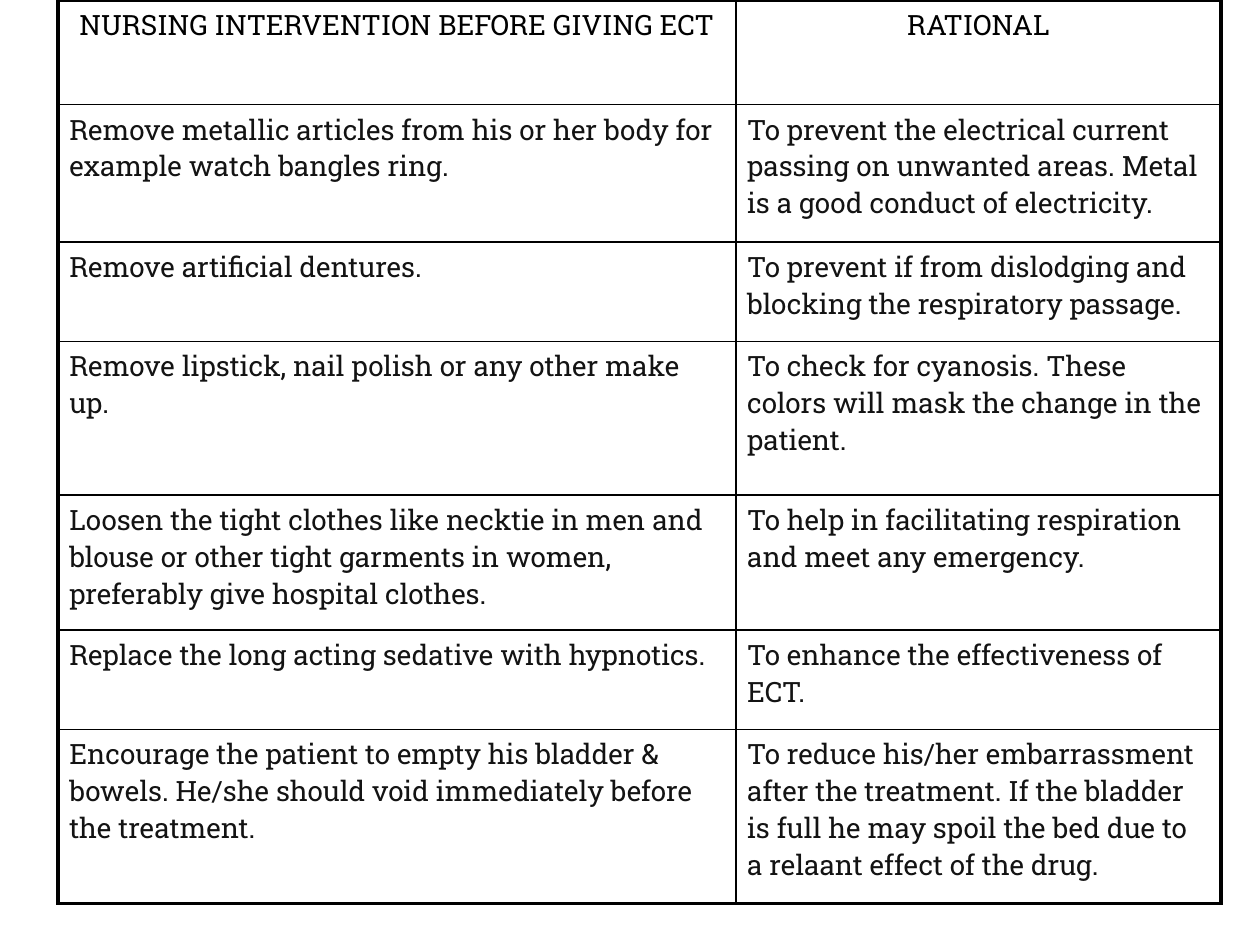
import pptx
import pptx.util
import pptx.dml.color
import pptx.enum.text
import pptx.oxml
import pptx.oxml.ns
from pptx.util import Inches

FONT = "Roboto Slab"
THICK, THIN = 2.25, 1
COLS = [5.38, 3.85]
HEIGHTS = [0.83, 1.09, 0.79, 1.22, 1.07, 0.79, 1.38]
ROWS = [
    ("NURSING INTERVENTION BEFORE GIVING ECT", "RATIONAL"),
    ("Remove metallic articles from his or her body for example watch bangles ring.",
     "To prevent the electrical current passing on unwanted areas. Metal is a good conduct of electricity."),
    ("Remove artificial dentures.",
     "To prevent if from dislodging and blocking the respiratory passage."),
    ("Remove lipstick, nail polish or any other make up.",
     "To check for cyanosis. These colors will mask the change in the patient."),
    ("Loosen the tight clothes like necktie in men and blouse or other tight garments in women, "
     "preferably give hospital clothes.",
     "To help in facilitating respiration and meet any emergency."),
    ("Replace the long acting sedative with hypnotics.",
     "To enhance the effectiveness of ECT."),
    ("Encourage the patient to empty his bladder & bowels. He/she should void immediately before the treatment.",
     "To reduce his/her embarrassment after the treatment. If the bladder is full he may spoil the bed "
     "due to a relaant effect of the drug."),
]


def rgb(color):
    return pptx.dml.color.RGBColor.from_string(color)


def write_text(tf, text, size=16, color="131313", align="LEFT"):
    p = tf.paragraphs[0]
    p.alignment = getattr(pptx.enum.text.PP_ALIGN, align)
    r = p.add_run()
    r.text = text
    r.font.name = FONT
    r.font.size = pptx.util.Pt(size)
    r.font.bold = False
    r.font.color.rgb = rgb(color)


def set_borders(cell, widths, color="000000"):
    tc_pr = cell._tc.get_or_add_tcPr()
    for side, width in zip("LRTB", widths):
        tc_pr.append(pptx.oxml.parse_xml(
            f'<a:ln{side} {pptx.oxml.ns.nsdecls("a")} w="{pptx.util.Pt(width)}">'
            f'<a:solidFill><a:srgbClr val="{color}"/></a:solidFill>'
            f'<a:prstDash val="solid"/></a:ln{side}>'))


def add_care_table(s, left, top, width, height):
    table = s.shapes.add_table(len(ROWS), len(COLS), left, top, width, height).table
    table.first_row = table.horz_banding = False
    for column, size in zip(table.columns, COLS):
        column.width = Inches(size)
    for row, size in zip(table.rows, HEIGHTS):
        row.height = Inches(size)
    last_row, last_col = len(ROWS) - 1, len(COLS) - 1
    for i, texts in enumerate(ROWS):
        style = {"color": "000000", "align": "CENTER"} if i == 0 else {}
        for j, text in enumerate(texts):
            cell = table.cell(i, j)
            cell.margin_left = cell.margin_right = Inches(0.09)
            cell.margin_top = cell.margin_bottom = Inches(0.05)
            write_text(cell.text_frame, text, **style)
            outer = (j == 0, j == last_col, i == 0, i == last_row)
            set_borders(cell, [THICK if edge else THIN for edge in outer])
            cell.fill.background()


def main():
    prs = pptx.Presentation()
    prs.slide_width, prs.slide_height = Inches(10), Inches(7.5)
    s = prs.slides.add_slide(prs.slide_layouts[6])
    add_care_table(s, Inches(0.46), Inches(0), Inches(sum(COLS)), Inches(sum(HEIGHTS)))
    prs.save("out.pptx")


if __name__ == "__main__":
    main()
